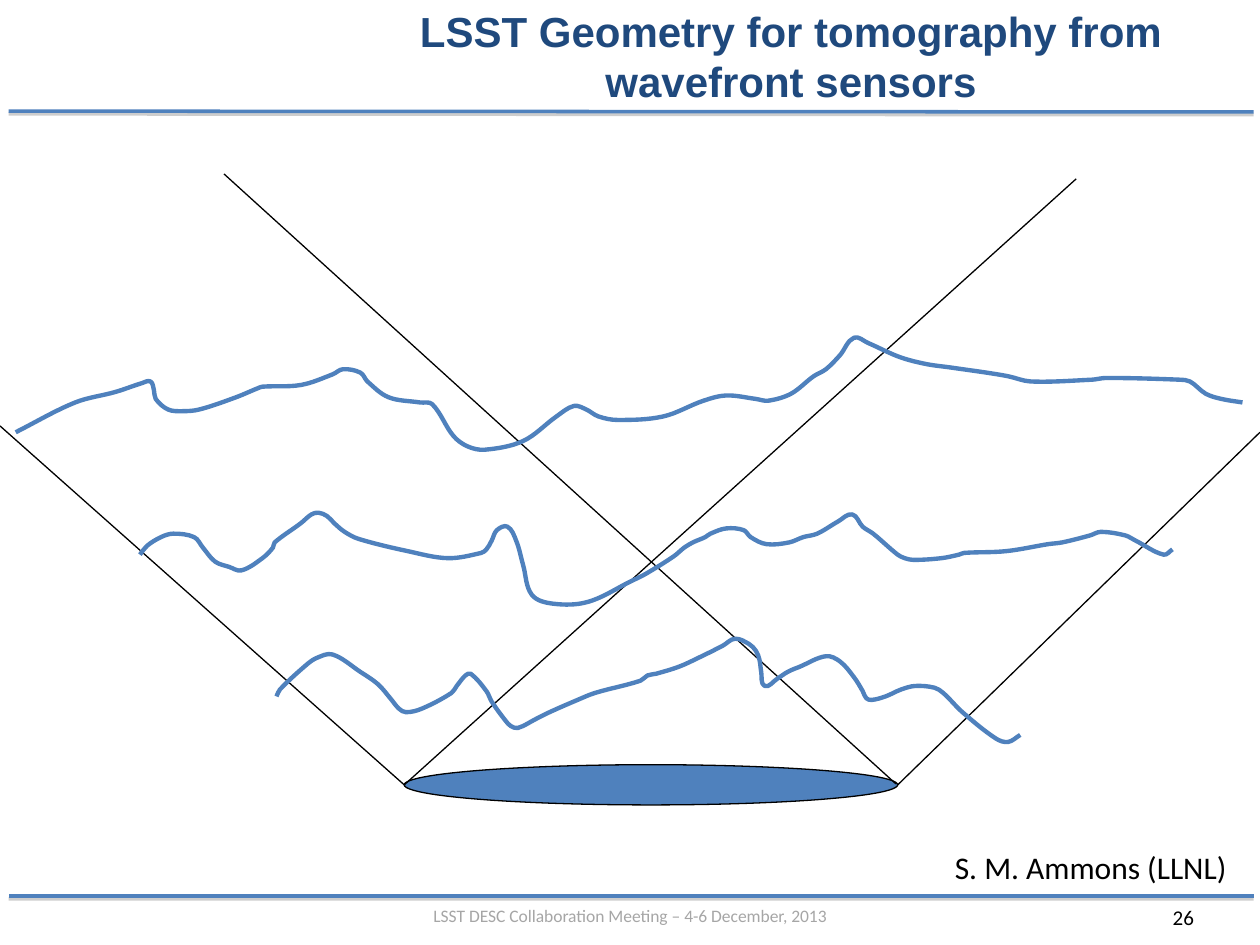
from math import hypot

from lxml import etree
from pptx import Presentation
from pptx.dml.color import RGBColor
from pptx.enum.shapes import MSO_CONNECTOR, MSO_SHAPE
from pptx.enum.text import MSO_ANCHOR, PP_ALIGN
from pptx.oxml.ns import qn
from pptx.util import Pt

STRAIGHT = MSO_CONNECTOR.STRAIGHT
ELLIPSE = MSO_SHAPE.OVAL
TOP, MIDDLE = MSO_ANCHOR.TOP, MSO_ANCHOR.MIDDLE
LEFT, CENTER = PP_ALIGN.LEFT, PP_ALIGN.CENTER

COLORS = {
    "blue": "4F81BD",
    "navy": "1F497D",
    "black": "000000",
    "footer": "A6A6A6",
    "shadow": "808080",
}

LOW_LAYER = [
    (158, 398), (160, 394), (175, 380), (181, 376), (190, 374), (206, 384),
    (216, 391), (223, 399), (228, 405), (232, 407), (241, 405), (258, 396),
    (261, 392), (266, 386), (269, 385), (278, 395), (281, 401), (289, 412),
    (292, 415), (296, 416), (306, 411), (314, 407), (330, 400), (340, 396),
    (366, 389), (370, 386), (375, 385), (388, 381), (399, 376), (413, 369),
    (420, 365), (428, 368), (432, 372), (434, 377), (435, 384), (437, 392),
    (444, 388), (450, 384), (457, 381), (472, 375), (480, 378), (488, 387),
    (493, 395), (495, 399), (498, 400), (506, 398), (515, 394), (523, 392),
    (534, 393), (539, 396), (550, 407), (569, 422), (576, 424), (583, 420),
]
MIDDLE_LAYER = [
    (80, 317), (84, 312), (92, 307), (99, 305), (111, 307), (116, 313),
    (123, 321), (131, 324), (138, 326), (150, 319), (156, 313), (157, 310),
    (172, 299), (178, 294), (182, 293), (187, 295), (191, 299), (197, 304),
    (205, 308), (233, 315), (256, 319), (275, 316), (278, 314), (281, 309),
    (284, 303), (290, 301), (295, 309), (299, 323), (304, 340), (316, 345),
    (336, 344), (361, 332), (369, 328), (385, 318), (391, 313), (396, 310),
    (403, 307), (406, 305), (415, 302), (425, 303), (429, 307), (438, 311),
    (451, 310), (459, 307), (467, 305), (479, 298), (487, 294), (493, 301),
    (499, 305), (513, 317), (517, 319), (522, 320), (538, 319), (548, 317),
    (551, 316), (575, 315), (599, 311), (607, 310), (623, 306), (629, 304),
    (643, 306), (649, 309), (665, 317), (670, 314),
]
HIGH_LAYER = [
    (9, 247), (43, 230), (66, 224), (81, 219), (86, 218), (88, 223),
    (89, 228), (96, 234), (104, 235), (114, 234), (135, 227), (147, 222),
    (150, 221), (172, 220), (190, 214), (196, 211), (206, 213), (210, 218),
    (222, 227), (240, 230), (247, 231), (259, 249), (267, 255), (277, 257),
    (299, 252), (318, 238), (328, 232), (335, 234), (342, 238), (353, 240),
    (379, 238), (402, 229), (415, 226), (432, 228), (439, 229), (452, 225),
    (465, 215), (472, 211), (480, 203), (488, 193), (496, 196), (514, 204),
    (529, 208), (543, 210), (564, 213), (576, 215), (589, 218), (624, 217),
    (632, 216), (674, 217), (680, 218), (689, 225), (698, 228), (710, 230),
]


def color(name):
    return RGBColor.from_string(COLORS[name])


def add_line(page, start, end, name, width, shadowed=False):
    line = page.shapes.add_connector(STRAIGHT, *(Pt(v) for v in start + end))
    line.line.color.rgb = color(name)
    line.line.width = Pt(width)
    effects = etree.SubElement(line.element.spPr, qn("a:effectLst"))
    if shadowed:
        shadow = etree.SubElement(effects, qn("a:outerShdw"), blurRad="0",
                                  dist=str(Pt(1.6)), dir="5400000", rotWithShape="0")
        shade = etree.SubElement(shadow, qn("a:srgbClr"), val=COLORS["shadow"])
        etree.SubElement(shade, qn("a:alpha"), val="38000")


def add_text(page, frame, text, size, name, font="Calibri", bold=False,
             align=LEFT, anchor=TOP, wrap=True):
    box = page.shapes.add_textbox(*(Pt(v) for v in frame))
    box.text_frame.word_wrap = wrap
    box.text_frame.vertical_anchor = anchor
    para = box.text_frame.paragraphs[0]
    para.alignment = align
    span = para.add_run()
    span.text = text
    span.font.name = font
    span.font.size = Pt(size)
    span.font.bold = bold
    span.font.color.rgb = color(name)


def add_mirror(page, frame):
    mirror = page.shapes.add_shape(ELLIPSE, *(Pt(v) for v in frame))
    mirror.shadow.inherit = False
    mirror.fill.solid()
    mirror.fill.fore_color.rgb = color("blue")
    mirror.line.color.rgb = color("black")
    mirror.line.width = Pt(0.75)


def tangents(knots):
    last = len(knots) - 1
    for i in range(len(knots)):
        (x0, y0), (x1, y1) = knots[max(i - 1, 0)], knots[min(i + 1, last)]
        length = hypot(x1 - x0, y1 - y0)
        yield (x1 - x0) / length, (y1 - y0) / length


def smooth_segments(outline):
    points = list(outline.element.iter(qn("a:pt")))
    knots = [(int(point.get("x")), int(point.get("y"))) for point in points]
    slopes = list(tangents(knots))
    for i, point in enumerate(points[1:]):
        (x0, y0), (x1, y1) = knots[i], knots[i + 1]
        (u0, v0), (u1, v1) = slopes[i], slopes[i + 1]
        reach = hypot(x1 - x0, y1 - y0) / 3
        segment = point.getparent()
        curve = etree.Element(qn("a:cubicBezTo"))
        for x, y in ((x0 + reach * u0, y0 + reach * v0),
                     (x1 - reach * u1, y1 - reach * v1), (x1, y1)):
            etree.SubElement(curve, qn("a:pt"), x=str(round(x)), y=str(round(y)))
        segment.getparent().replace(segment, curve)


def add_layer(page, knots):
    points = [(Pt(x), Pt(y)) for x, y in knots]
    builder = page.shapes.build_freeform(*points[0])
    builder.add_line_segments(points[1:], close=False)
    layer = builder.convert_to_shape()
    smooth_segments(layer)
    layer.shadow.inherit = False
    layer.fill.background()
    layer.line.color.rgb = color("blue")
    layer.line.width = Pt(2.5)


def main():
    deck = Presentation()
    deck.slide_width, deck.slide_height = Pt(720), Pt(540)
    page = deck.slides.add_slide(deck.slide_layouts[6])

    for right_y, left_y in ((64, 63.5), (512, 512)):
        add_line(page, (716.4, right_y), (5, left_y), "blue", 2, shadowed=True)
    add_text(page, (663, 513.4, 44.6, 21.6), "26", 12, "black")
    add_text(page, (36, 513.4, 648, 19.4),
             "LSST DESC Collaboration Meeting – 4-6 December, 2013",
             10, "footer", align=CENTER)
    add_text(page, (200, 0, 504, 63.4),
             "LSST Geometry for tomography from wavefront sensors",
             24, "navy", font="Arial", bold=True, align=CENTER, anchor=MIDDLE)

    add_mirror(page, (231, 437, 282, 23))
    for start, end in (((231, 448.5), (0, 243.4)), ((512, 448), (128, 99.4)),
                       ((231, 448.5), (615, 102.2)), ((513, 448.5), (720, 247))):
        add_line(page, start, end, "black", 0.75)
    for knots in (LOW_LAYER, MIDDLE_LAYER, HIGH_LAYER):
        add_layer(page, knots)
    add_text(page, (538.5, 481, 171.4, 28.8), "S. M. Ammons (LLNL)",
             18, "black", wrap=False)
    deck.save("out.pptx")


if __name__ == "__main__":
    main()
